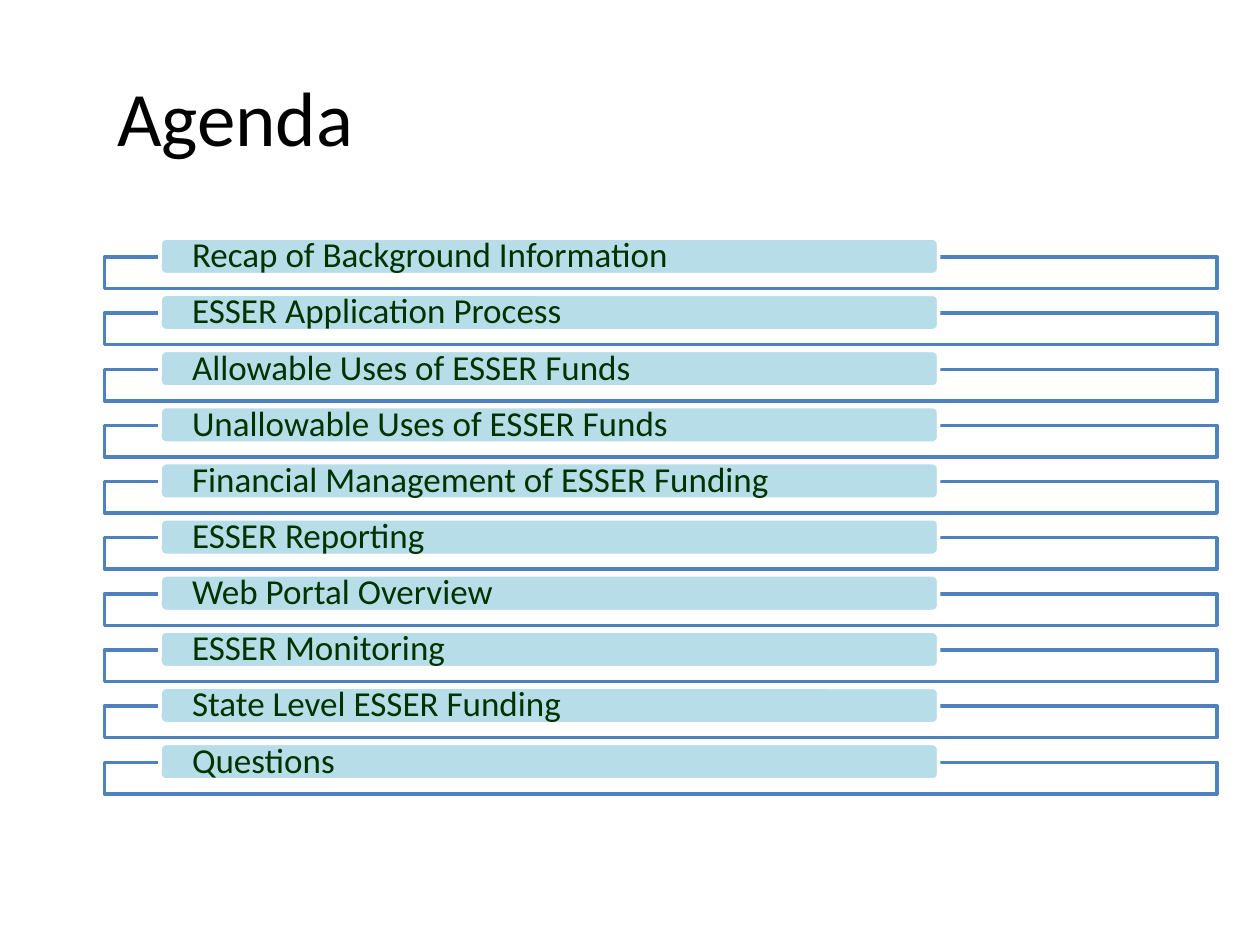
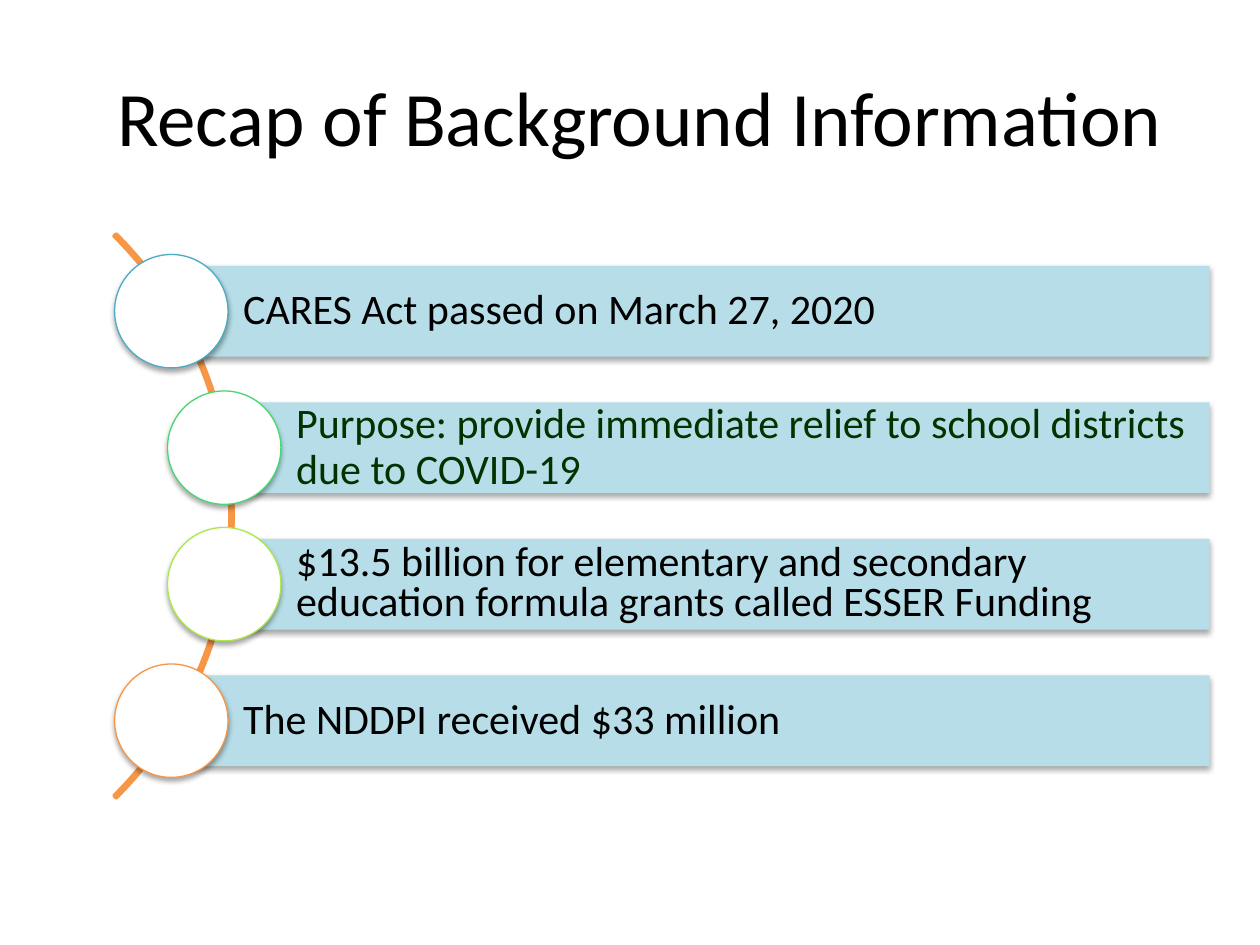
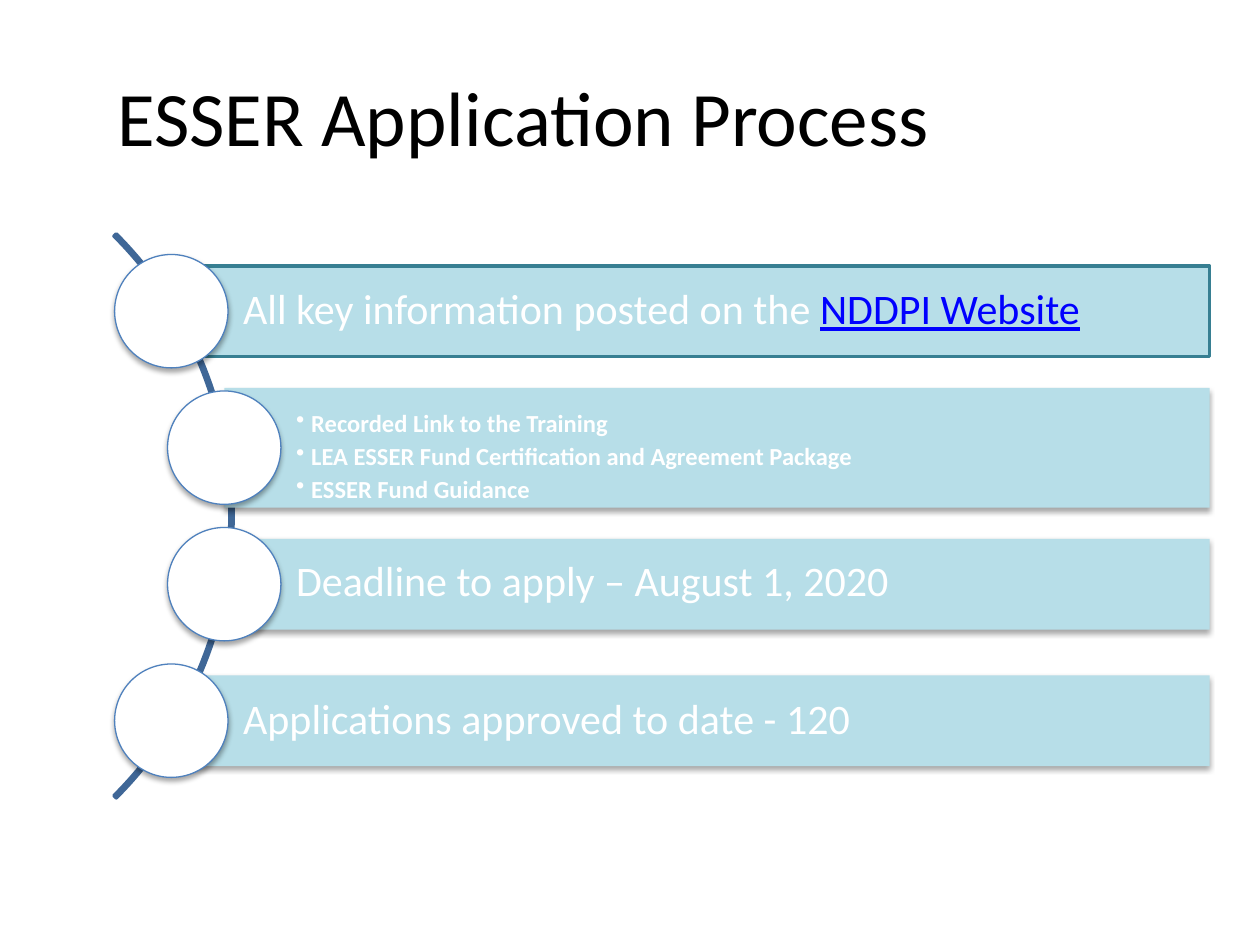
from dataclasses import dataclass
from typing import Any, Optional

from pptx import Presentation as Deck
from pptx.dml.color import RGBColor as Rgb
from pptx.enum.shapes import MSO_SHAPE as Kind
from pptx.enum.text import MSO_ANCHOR as Anchor, MSO_AUTO_SIZE as Fit, PP_ALIGN as Align
from pptx.oxml import parse_xml as to_xml
from pptx.oxml.ns import nsdecls, qn
from pptx.util import Inches, Pt

FACE = "Calibri"
BLACK, WHITE, GREEN = "000000", "FFFFFF", "003300"
PALE, BLUE, LINK = "B7DEE8", "4F81BD", "0000FF"
TITLE = {"left": 0.83, "top": 0.29, "width": 8.83, "height": 1.25}
TOPICS = (
    "Recap of Background Information",
    "ESSER Application Process",
    "Allowable Uses of ESSER Funds",
    "Unallowable Uses of ESSER Funds",
    "Financial Management of ESSER Funding",
    "ESSER Reporting",
    "Web Portal Overview",
    "ESSER Monitoring",
    "State Level ESSER Funding",
    "Questions",
)
ROW_TOP, ROW_STEP = 2.04, 4.01 / 9
BAND_MID, BAND_STEP = 2.47, 3.25 / 3
BAND_LEFTS, BAND_END = (1.36, 1.78, 1.78, 1.36), 9.6
RING = 0.9


@dataclass(frozen=True)
class Box:
    left: float
    top: float
    width: float
    height: float


@dataclass(frozen=True)
class Look:
    fill: Optional[str] = None
    line: Optional[str] = None
    weight: float = 2
    alpha: int = 100
    shadow: bool = False


@dataclass(frozen=True)
class Band:
    text: str
    hue: str
    ring: str = BLUE
    lead: float = 0.9
    link: str = ""
    edge: Optional[str] = None


@dataclass(frozen=True)
class Points:
    lines: tuple[str, ...]
    hue: str = WHITE
    ring: str = BLUE
    edge: Optional[str] = None


def tint(code: str) -> Rgb:
    return Rgb.from_string(code)


def put(item: Any, form: dict[str, Any]) -> None:
    for name, value in form.items():
        setattr(item, name, value)


def style(font: Any, size: float, hue: str, bold: bool = False) -> None:
    put(font, {"name": FACE, "size": Pt(size), "bold": bold})
    font.color.rgb = tint(hue)


def frame(shape: Any, pads: tuple[float, float, float, float], anchor: Any) -> Any:
    text = shape.text_frame
    names = ("margin_left", "margin_top", "margin_right", "margin_bottom")
    put(text, dict(zip(names, map(Inches, pads))))
    put(text, {"word_wrap": True, "vertical_anchor": anchor})
    return text


def draw(slide: Any, kind: Any, box: Box, look: Look) -> Any:
    spot = map(Inches, (box.left, box.top, box.width, box.height))
    shape = slide.shapes.add_shape(kind, *spot)
    shape.shadow.inherit = False
    if look.fill:
        shape.fill.solid()
        shape.fill.fore_color.rgb = tint(look.fill)
    else:
        shape.fill.background()
    if look.line:
        shape.line.color.rgb = tint(look.line)
        shape.line.width = Pt(look.weight)
    else:
        shape.line.fill.background()
    props = shape.element.spPr
    if look.alpha < 100:
        paint = props.find(qn("a:solidFill"))[0]
        paint.append(to_xml(f'<a:alpha {nsdecls("a")} val="{look.alpha * 1000}"/>'))
    if look.shadow:
        props.find(qn("a:effectLst")).append(to_xml(
            f'<a:outerShdw {nsdecls("a")} blurRad="{Pt(3.1)}" dist="{Pt(1.8)}" '
            'dir="5400000" rotWithShape="0"><a:srgbClr val="000000">'
            '<a:alpha val="35000"/></a:srgbClr></a:outerShdw>'))
    return shape


def write(shape: Any, text: str, size: float, hue: str, lead: float,
          pads: tuple[float, float, float, float], link: str = "") -> None:
    para = frame(shape, pads, Anchor.MIDDLE).paragraphs[0]
    put(para, {"alignment": Align.LEFT, "line_spacing": lead})
    run = para.add_run()
    run.text = text
    style(run.font, size, hue)
    if link:
        run = para.add_run()
        run.text = link
        style(run.font, size, LINK)
        run.font.underline = True


def list_points(shape: Any, points: Points) -> None:
    text = frame(shape, (0.57, 0.16, 0.04, 0), Anchor.TOP)
    for i, line in enumerate(points.lines):
        para = text.paragraphs[0] if i == 0 else text.add_paragraph()
        props = para._p.get_or_add_pPr()
        props.set("marL", str(Inches(0.12)))
        props.set("indent", str(-Inches(0.12)))
        props.append(to_xml(f'<a:buChar {nsdecls("a")} char="•"/>'))
        put(para, {"alignment": Align.LEFT, "space_after": Pt(2)})
        run = para.add_run()
        run.text = line
        style(run.font, 14, points.hue, True)


def start(deck: Any, title: str) -> Any:
    slide = deck.slides.add_slide(deck.slide_layouts[5])
    head = slide.shapes.title
    put(head, {name: Inches(value) for name, value in TITLE.items()})
    text = head.text_frame
    put(text, {"text": title, "auto_size": Fit.NONE, "vertical_anchor": Anchor.MIDDLE})
    para = text.paragraphs[0]
    para.alignment = Align.LEFT
    style(para.runs[0].font, 44, BLACK)
    return slide


def agenda(deck: Any) -> None:
    slide = start(deck, "Agenda")
    for i, topic in enumerate(TOPICS):
        top = ROW_TOP + i * ROW_STEP
        draw(slide, Kind.RECTANGLE, Box(0.83, top, 8.83, 0.25),
             Look(WHITE, BLUE, alpha=90))
        label = draw(slide, Kind.ROUNDED_RECTANGLE, Box(1.27, top - 0.15, 6.18, 0.29),
                     Look(PALE, WHITE))
        write(label, topic, 20, GREEN, 0.9, (0.24, 0, 0.24, 0))


def curve(deck: Any, title: str, hue: str, bands: tuple[Band | Points, ...]) -> None:
    slide = start(deck, title)
    arc = draw(slide, Kind.BLOCK_ARC, Box(-4.48, 0.93, 6.33, 6.33), Look(line=hue))
    for i, value in enumerate((189, 27, 0.004)):
        arc.adjustments[i] = value
    for i, (left, band) in enumerate(zip(BAND_LEFTS, bands)):
        mid = BAND_MID + i * BAND_STEP
        tall = 0.95 if isinstance(band, Points) else 0.72
        bar = draw(slide, Kind.RECTANGLE,
                   Box(left, mid - tall / 2, BAND_END - left, tall),
                   Look(PALE, band.edge, shadow=not band.edge))
        if isinstance(band, Points):
            list_points(bar, band)
        else:
            write(bar, band.text, 24, band.hue, band.lead,
                  (0.57, 0.07, 0.07, 0.07), band.link)
        draw(slide, Kind.OVAL, Box(left - RING / 2, mid - RING / 2, RING, RING),
             Look(WHITE, band.ring, 0.75, shadow=True))


def main() -> None:
    deck = Deck()
    put(deck, {"slide_width": Inches(10), "slide_height": Inches(7.5)})
    agenda(deck)
    curve(deck, TOPICS[0], "F79646", (
        Band("CARES Act passed on March 27, 2020", BLACK, "4BACC6"),
        Band("Purpose: provide immediate relief to school districts due to COVID-19",
             GREEN, "47D872"),
        Band("$13.5 billion for elementary and secondary education formula grants "
             "called ESSER Funding", BLACK, "ACE946", 0.8),
        Band("The NDDPI received $33 million", BLACK, "F79646"),
    ))
    curve(deck, TOPICS[1], "3F6797", (
        Band("All key information posted on the ", WHITE, link="NDDPI Website",
             edge="377F92"),
        Points(("Recorded Link to the Training",
                "LEA ESSER Fund Certification and Agreement Package",
                "ESSER Fund Guidance")),
        Band("Deadline to apply – August 1, 2020", WHITE, lead=0.8),
        Band("Applications approved to date - 120", WHITE),
    ))
    deck.save("out.pptx")


if __name__ == "__main__":
    main()
